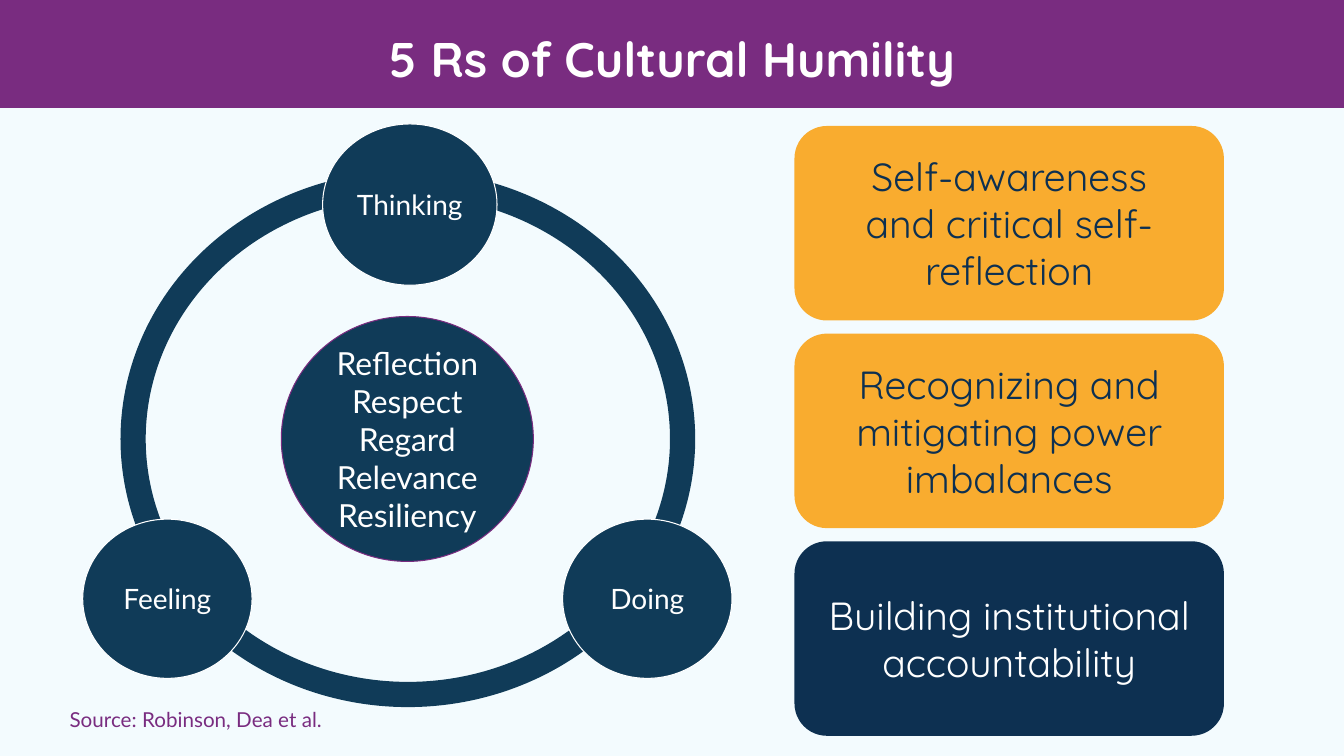
from dataclasses import dataclass
from typing import Optional

from pptx import Presentation
from pptx.dml.color import RGBColor
from pptx.enum.shapes import MSO_SHAPE
from pptx.enum.text import MSO_ANCHOR, PP_ALIGN
from pptx.util import Inches, Pt


@dataclass(frozen=True)
class Theme:
    """Colours, fonts and type sizes of the slide."""
    pale: str = "F3FBFE"
    purple: str = "792C80"
    amber: str = "F9AC2F"
    navy: str = "0D3051"
    teal: str = "103B58"
    white: str = "FFFFFF"
    head_font: str = "Quicksand"
    body_font: str = "Lato"
    title: float = 34.7
    card: float = 28
    core: float = 22.7
    node: float = 20
    source: float = 14.7


T = Theme()


@dataclass(frozen=True)
class Label:
    """Text with its type settings."""
    text: str
    font: str
    size: float
    color: str
    bold: bool = False
    align: PP_ALIGN = PP_ALIGN.CENTER
    anchor: MSO_ANCHOR = MSO_ANCHOR.MIDDLE
    inset: float = 0.13


@dataclass(frozen=True)
class Block:
    """A preset shape with optional fill, line and label."""
    kind: MSO_SHAPE
    box: tuple[float, float, float, float]
    fill: Optional[str] = None
    line: Optional[str] = None
    width: float = 0.75
    label: Optional[Label] = None


def write(sp, label: Label) -> None:
    """Put a label into a shape or text box."""
    tf = sp.text_frame
    inset = Inches(label.inset)
    frame = {"word_wrap": True, "vertical_anchor": label.anchor,
             "margin_left": inset, "margin_right": inset,
             "margin_top": inset, "margin_bottom": inset}
    for name, value in frame.items():
        setattr(tf, name, value)
    tf.text = label.text
    font = {"name": label.font, "size": Pt(label.size), "bold": label.bold}
    for p in tf.paragraphs:
        p.alignment = label.align
        for r in p.runs:
            for name, value in font.items():
                setattr(r.font, name, value)
            r.font.color.rgb = RGBColor.from_string(label.color)


def draw(s, block: Block) -> None:
    """Draw one block on the slide."""
    sp = s.shapes.add_shape(block.kind, *map(Inches, block.box))
    sp.shadow.inherit = False
    if block.fill:
        sp.fill.solid()
        sp.fill.fore_color.rgb = RGBColor.from_string(block.fill)
    else:
        sp.fill.background()
    if block.line:
        sp.line.color.rgb = RGBColor.from_string(block.line)
        sp.line.width = Pt(block.width)
    else:
        sp.line.fill.background()
    if block.label:
        write(sp, block.label)


def add_text(s, box: tuple[float, float, float, float], label: Label) -> None:
    """Add a text box."""
    write(s.shapes.add_textbox(*map(Inches, box)), label)


def card(row: int, text: str, fill: str, color: str) -> Block:
    """Describe a rounded card in the right column."""
    return Block(MSO_SHAPE.ROUNDED_RECTANGLE, (7.88, 1.25 + 2.06 * row, 4.26, 1.93),
                 fill, label=Label(text, T.head_font, T.card, color))


def node(text: str, box: tuple[float, float, float, float], inset: float = 0.13) -> Block:
    """Describe a small circle on the ring."""
    return Block(MSO_SHAPE.OVAL, box, T.teal, T.white,
                 label=Label(text, T.body_font, T.node, T.white, inset=inset))


RS = ("Reflection", "Respect", "Regard", "Relevance", "Resiliency")
BLOCKS = (
    Block(MSO_SHAPE.RECTANGLE, (0, -0.01, 13.33, 1.08), T.purple),
    card(0, "Self-awareness\vand critical self-reflection", T.amber, T.navy),
    card(1, "Recognizing and mitigating power imbalances", T.amber, T.navy),
    card(2, "Building institutional accountability", T.navy, T.white),
    Block(MSO_SHAPE.OVAL, (1.32, 1.82, 5.45, 5.07), line=T.teal, width=18),
    Block(MSO_SHAPE.OVAL, (2.79, 3.14, 2.5, 2.43), T.teal, T.purple,
          label=Label("\n".join(RS), T.body_font, T.core, T.white)),
    node("Thinking", (3.2, 1.23, 1.73, 1.6), 0.08),
    node("Feeling", (0.82, 5.15, 1.68, 1.58)),
    node("Doing", (5.58, 5.15, 1.68, 1.58)),
)


def main() -> None:
    """Build and save the slide."""
    prs = Presentation()
    prs.slide_width, prs.slide_height = Inches(13.33), Inches(7.5)
    s = prs.slides.add_slide(prs.slide_layouts[6])
    s.background.fill.solid()
    s.background.fill.fore_color.rgb = RGBColor.from_string(T.pale)
    for block in BLOCKS:
        draw(s, block)
    add_text(s, (0, 0.16, 13.33, 0.73),
             Label("5 Rs of Cultural Humility", T.head_font, T.title, T.white,
                   bold=True, anchor=MSO_ANCHOR.TOP))
    add_text(s, (0.56, 6.89, 3.48, 0.52),
             Label("Source: Robinson, Dea et al.", T.body_font, T.source, T.purple,
                   align=PP_ALIGN.LEFT, anchor=MSO_ANCHOR.TOP))
    prs.save("out.pptx")


if __name__ == "__main__":
    main()
